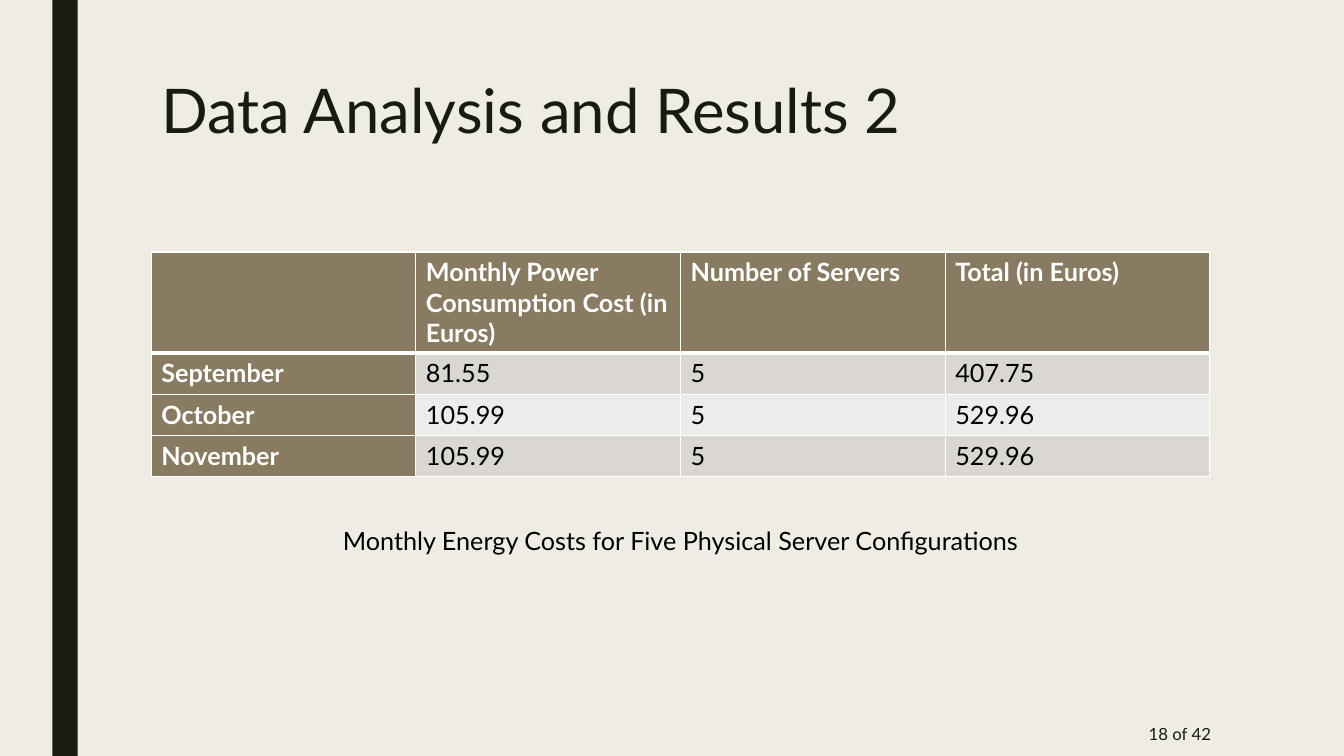
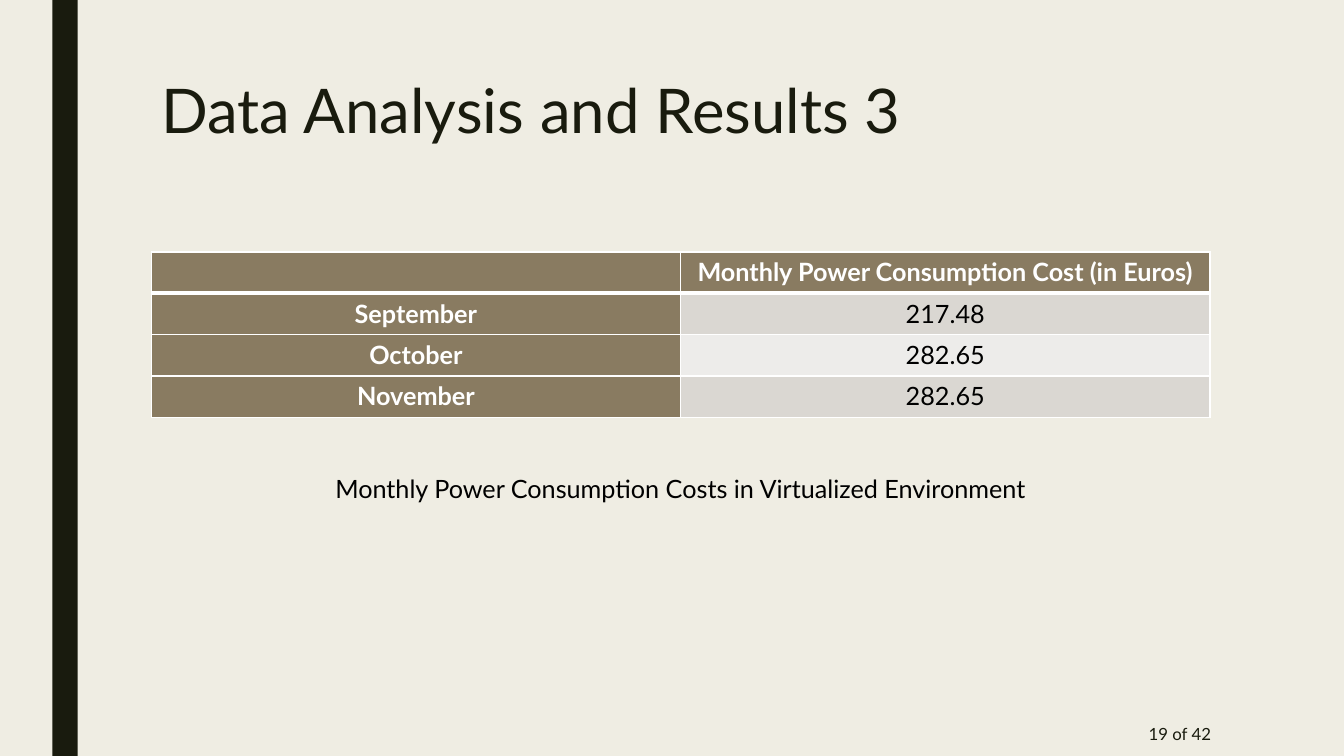
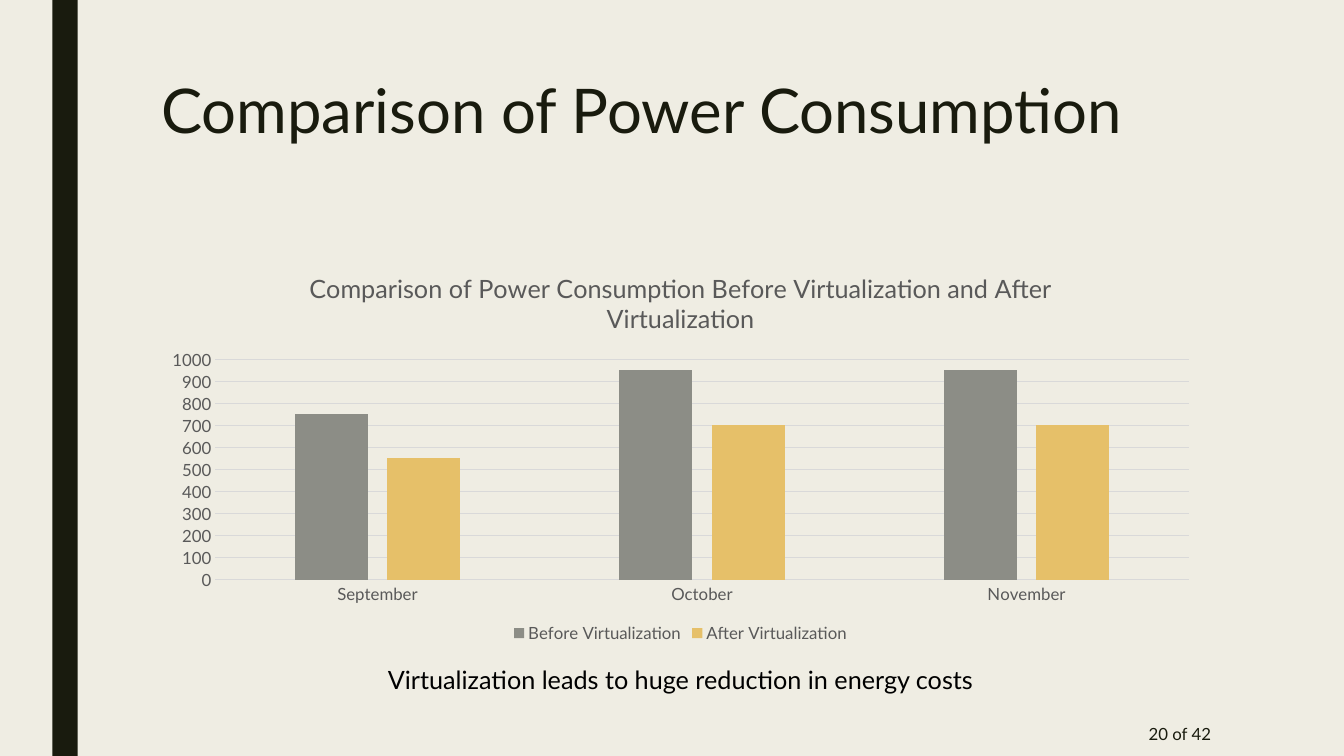
from dataclasses import dataclass

from lxml import etree
from pptx import Presentation
from pptx import util as u
from pptx.chart.data import CategoryChartData
from pptx.dml.color import RGBColor
from pptx.enum import chart as charts
from pptx.enum import shapes, text
from pptx.oxml import ns


@dataclass(frozen=True)
class Theme:
    font: str = "Lato"
    paper: str = "EFEDE3"
    ink: str = "191B0E"
    body: str = "000000"
    muted: str = "595959"
    grid: str = "D9D9D9"
    header: str = "897B61"
    on_header: str = "FFFFFF"
    bands: tuple = ("DAD7D2", "EDECEA")
    series: tuple = ("8C8D86", "E6C069")
    title_size: int = 44
    body_size: int = 18
    small_size: int = 12


THEME = Theme()
WIDTH, HEIGHT = 13.33, 7.5
LEFT, CONTENT_TOP, CONTENT_WIDTH = 1.5, 2.5, 10.5
ROW_HEIGHT = 0.41
CHART_HEIGHT = 3.92
FIRST_NUMBER, TOTAL = 18, 42
MONTHS = ["September", "October", "November"]
COST = "Monthly Power Consumption Cost (in Euros)"

PAGES = [
    {
        "title": "Data Analysis and Results 2",
        "table": [
            ["", COST, "Number of Servers", "Total (in Euros)"],
            [MONTHS[0], "81.55", "5", "407.75"],
            [MONTHS[1], "105.99", "5", "529.96"],
            [MONTHS[2], "105.99", "5", "529.96"],
        ],
        "align": text.PP_ALIGN.LEFT,
        "header_height": 1.0,
        "caption": "Monthly Energy Costs for Five Physical Server Configurations",
        "caption_top": 5.16,
    },
    {
        "title": "Data Analysis and Results 3",
        "table": [
            ["", COST],
            [MONTHS[0], "217.48"],
            [MONTHS[1], "282.65"],
            [MONTHS[2], "282.65"],
        ],
        "align": text.PP_ALIGN.CENTER,
        "header_height": ROW_HEIGHT,
        "caption": "Monthly Power Consumption Costs in Virtualized Environment",
        "caption_top": 4.65,
    },
    {
        "title": "Comparison of Power Consumption",
        "chart": {
            "title": "Comparison of Power Consumption Before Virtualization and After Virtualization",
            "series": {
                "Before Virtualization": [750, 950, 950],
                "After Virtualization": [550, 700, 700],
            },
        },
        "caption": "Virtualization leads to huge reduction in energy costs",
        "caption_top": 6.54,
    },
]


def rgb(color):
    return RGBColor.from_string(color)


def inches(*lengths):
    return [u.Inches(length) for length in lengths]


def style_font(font, size, color, bold=False):
    font.name = THEME.font
    font.size = u.Pt(size)
    font.color.rgb = rgb(color)
    font.bold = bold


def write(frame, words, size, color, align, bold=False):
    para = frame.paragraphs[0]
    para.alignment = align
    span = para.add_run()
    span.text = words
    style_font(span.font, size, color, bold)
    return para


def add_text(page, area, words, size, color, align):
    box = page.shapes.add_textbox(*inches(*area))
    box.text_frame.word_wrap = True
    write(box.text_frame, words, size, color, align)
    return box.text_frame


def add_frame(page, title, number):
    band = page.shapes.add_shape(
        shapes.MSO_SHAPE.RECTANGLE, *inches(0.52, 0, 0.25, HEIGHT))
    band.shadow.inherit = False
    band.fill.solid()
    band.fill.fore_color.rgb = rgb(THEME.ink)
    band.line.fill.background()
    heading = add_text(page, (LEFT, 0.75, CONTENT_WIDTH, 1.62), title,
                       THEME.title_size, THEME.ink, text.PP_ALIGN.LEFT)
    heading.paragraphs[0].line_spacing = 0.89
    footer = add_text(page, (10.36, 7.06, 1.75, 0.44), f"{number} of {TOTAL}",
                      THEME.small_size, THEME.ink, text.PP_ALIGN.RIGHT)
    footer.vertical_anchor = text.MSO_ANCHOR.MIDDLE


def add_caption(page, words, top):
    caption = add_text(page, (LEFT, top, CONTENT_WIDTH, 0.4), words,
                       THEME.body_size, THEME.body, text.PP_ALIGN.CENTER)
    caption.auto_size = text.MSO_AUTO_SIZE.SHAPE_TO_FIT_TEXT


def add_borders(cell, row):
    properties = cell._tc.get_or_add_tcPr()
    widths = {"L": 1, "R": 1, "T": 3 if row == 1 else 1, "B": 3 if row == 0 else 1}
    for side, width in widths.items():
        line = etree.SubElement(properties, ns.qn(f"a:ln{side}"), w=str(u.Pt(width)))
        fill = etree.SubElement(line, ns.qn("a:solidFill"))
        etree.SubElement(fill, ns.qn("a:srgbClr"), val=THEME.on_header)


def add_table(page, rows, align, header_height):
    heights = [header_height] + [ROW_HEIGHT] * (len(rows) - 1)
    count = len(rows[0])
    table = page.shapes.add_table(
        len(rows), count,
        *inches(LEFT, CONTENT_TOP, CONTENT_WIDTH, sum(heights))).table
    table.first_col = True
    for column in table.columns:
        column.width = u.Inches(CONTENT_WIDTH / count)
    for row, values in enumerate(rows):
        table.rows[row].height = u.Inches(heights[row])
        for column, value in enumerate(values):
            cell = table.cell(row, column)
            is_header = row == 0 or column == 0
            add_borders(cell, row)
            cell.fill.solid()
            cell.fill.fore_color.rgb = rgb(
                THEME.header if is_header else THEME.bands[(row - 1) % 2])
            if value:
                write(cell.text_frame, value, THEME.body_size,
                      THEME.on_header if is_header else THEME.body, align, is_header)


def add_chart(page, title, series):
    data = CategoryChartData()
    data.categories = MONTHS
    for name, values in series.items():
        data.add_series(name, values)
    chart = page.shapes.add_chart(
        charts.XL_CHART_TYPE.COLUMN_CLUSTERED,
        *inches(LEFT, CONTENT_TOP, CONTENT_WIDTH, CHART_HEIGHT), data).chart
    style_font(chart.font, THEME.small_size, THEME.muted)
    chart.has_title = True
    write(chart.chart_title.text_frame, title, THEME.body_size, THEME.muted,
          text.PP_ALIGN.CENTER)
    chart.chart_title.include_in_layout = False
    chart.has_legend = True
    chart.legend.position = charts.XL_LEGEND_POSITION.BOTTOM
    chart.legend.include_in_layout = False
    style_font(chart.legend.font, THEME.small_size, THEME.muted)

    for axis in (chart.category_axis, chart.value_axis):
        axis.major_tick_mark = axis.minor_tick_mark = charts.XL_TICK_MARK.NONE
        style_font(axis.tick_labels.font, THEME.small_size, THEME.muted)
    scale = chart.value_axis
    scale.minimum_scale, scale.maximum_scale, scale.major_unit = 0, 1000, 100
    scale.format.line.fill.background()
    for line in (chart.category_axis.format.line, scale.major_gridlines.format.line):
        line.color.rgb = rgb(THEME.grid)
        line.width = u.Pt(0.75)

    plot = chart.plots[0]
    plot.vary_by_categories = False
    plot.gap_width, plot.overlap = 219, -27
    for bars, color in zip(plot.series, THEME.series):
        bars.format.fill.solid()
        bars.format.fill.fore_color.rgb = rgb(color)


def main():
    deck = Presentation()
    deck.slide_width, deck.slide_height = inches(WIDTH, HEIGHT)
    background = deck.slide_master.background.fill
    background.solid()
    background.fore_color.rgb = rgb(THEME.paper)
    for number, content in enumerate(PAGES, FIRST_NUMBER):
        page = deck.slides.add_slide(deck.slide_layouts[6])
        add_frame(page, content["title"], number)
        if "table" in content:
            add_table(page, content["table"], content["align"], content["header_height"])
        else:
            add_chart(page, **content["chart"])
        add_caption(page, content["caption"], content["caption_top"])
    deck.save("out.pptx")


if __name__ == "__main__":
    main()
